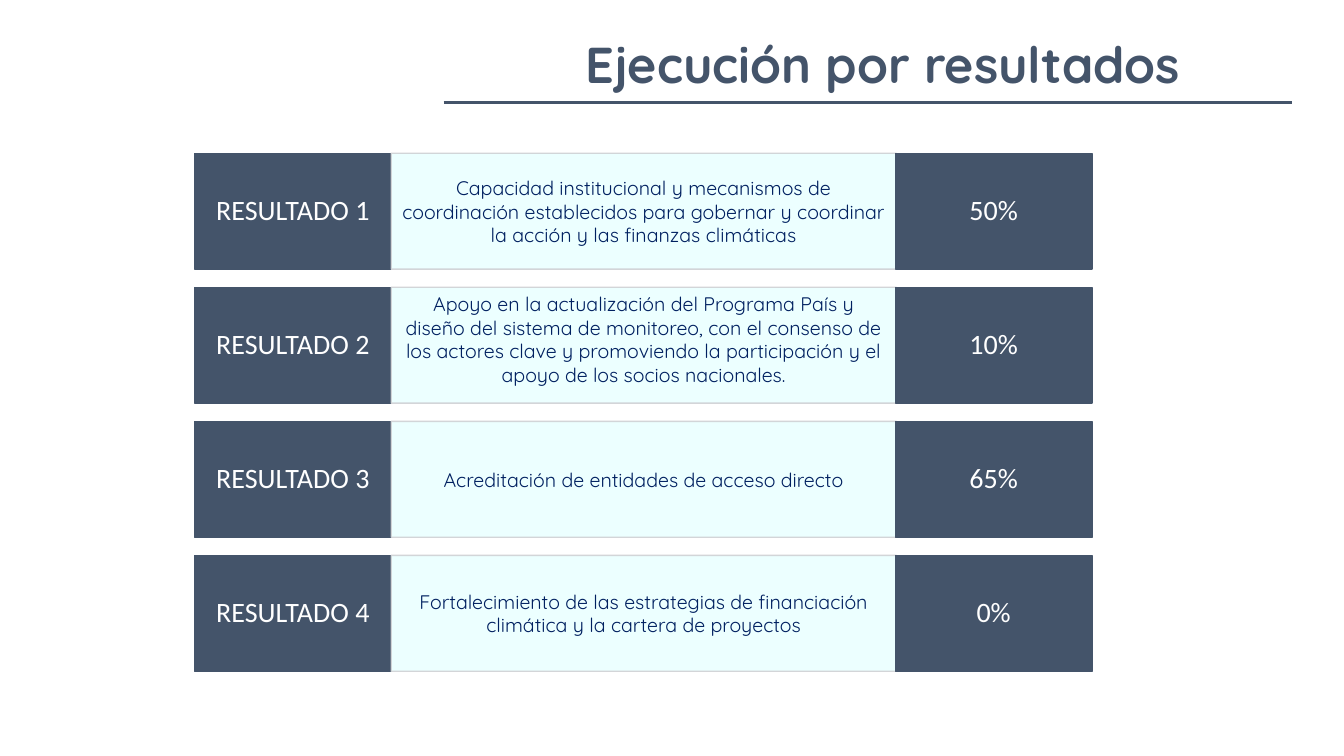
"""Builds the slide that shows progress for each result."""
from dataclasses import dataclass

from lxml.etree import SubElement
from pptx import Presentation
from pptx.dml.color import RGBColor
from pptx.enum.shapes import MSO_CONNECTOR as Connector, MSO_SHAPE as Shape
from pptx.enum.text import MSO_ANCHOR as Anchor, PP_ALIGN as Align
from pptx.oxml.ns import qn
from pptx.util import Inches, Pt


@dataclass(frozen=True)
class Theme:
    slate: RGBColor = RGBColor(0x44, 0x54, 0x6A)
    ice: RGBColor = RGBColor(0xEB, 0xFF, 0xFF)
    border: RGBColor = RGBColor(0xCF, 0xD1, 0xD4)
    navy: RGBColor = RGBColor(0x00, 0x20, 0x60)
    white: RGBColor = RGBColor(0xFF, 0xFF, 0xFF)
    heading_font: str = "Quicksand"
    label_font: str = "Calibri"
    title_size: int = 36
    label_size: int = 20
    body_size: int = 14


THEME = Theme()
ROW_TOP, ROW_PITCH, ROW_HEIGHT = 1.52, 1.33, 1.15
LABEL_LEFT, DESCRIPTION_LEFT, PERCENT_LEFT = 1.93, 3.88, 8.88
LABEL_WIDTH, DESCRIPTION_WIDTH = 1.95, 5.01
RESULTS = [
    ("RESULTADO 1", "Capacidad institucional y mecanismos de coordinación establecidos "
     "para gobernar y coordinar la acción y las finanzas climáticas", "50%", Anchor.MIDDLE),
    ("RESULTADO 2", "Apoyo en la actualización del Programa País y diseño del sistema de "
     "monitoreo, con el consenso de los actores clave y promoviendo la participación y el "
     "apoyo de los socios nacionales.", "10%", Anchor.TOP),
    ("RESULTADO 3", "Acreditación de entidades de acceso directo", "65%", Anchor.MIDDLE),
    ("RESULTADO 4", "Fortalecimiento de las estrategias de financiación climática y la "
     "cartera de proyectos", "0%", Anchor.MIDDLE),
]


def write_text(shape, text, *, font, size, color, bold=False, anchor=Anchor.MIDDLE,
               line_spacing=1.0, margins=(0.1, 0.05)):
    frame = shape.text_frame
    frame.word_wrap = True
    frame.vertical_anchor = anchor
    frame.margin_left = frame.margin_right = Inches(margins[0])
    frame.margin_top = frame.margin_bottom = Inches(margins[1])
    paragraph = frame.paragraphs[0]
    paragraph.text = text
    paragraph.alignment = Align.CENTER
    paragraph.line_spacing = line_spacing
    paragraph.font.name = font
    paragraph.font.size = Pt(size)
    paragraph.font.bold = bold
    paragraph.font.color.rgb = color


def add_box(slide, left, top, width, fill, line):
    shape = slide.shapes.add_shape(Shape.RECTANGLE, Inches(left), Inches(top),
                                   Inches(width), Inches(ROW_HEIGHT))
    shape.shadow.inherit = False
    shape.fill.solid()
    shape.fill.fore_color.rgb = fill
    shape.line.color.rgb = line
    shape.line.width = Pt(1)
    return shape


def add_label(slide, left, top, text):
    box = add_box(slide, left, top, LABEL_WIDTH, THEME.slate, THEME.slate)
    write_text(box, text, font=THEME.label_font, size=THEME.label_size,
               color=THEME.white, line_spacing=0.9, margins=(0.19, 0.11))


def add_description(slide, top, text, anchor):
    box = add_box(slide, DESCRIPTION_LEFT, top, DESCRIPTION_WIDTH, THEME.ice, THEME.border)
    for color in box.fill._xPr.iter(qn("a:srgbClr")):
        SubElement(color, qn("a:alpha"), val="90000")
    write_text(box, text, font=THEME.heading_font, size=THEME.body_size,
               color=THEME.navy, anchor=anchor)


def add_title(slide, text):
    box = slide.shapes.add_textbox(Inches(4.17), Inches(0.31), Inches(9.17), Inches(0.72))
    write_text(box, text, font=THEME.heading_font, size=THEME.title_size,
               color=THEME.slate, bold=True, line_spacing=0.9)


def add_rule(slide, left, right, top):
    rule = slide.shapes.add_connector(Connector.STRAIGHT, Inches(left), Inches(top),
                                      Inches(right), Inches(top))
    rule.line.color.rgb = THEME.slate
    rule.line.width = Pt(2.25)
    SubElement(rule._element.spPr, qn("a:effectLst"))


def main():
    presentation = Presentation()
    presentation.slide_width = Inches(13.33)
    presentation.slide_height = Inches(7.5)
    slide = presentation.slides.add_slide(presentation.slide_layouts[6])
    add_title(slide, "Ejecución por resultados")
    for index, (label, description, percent, anchor) in enumerate(RESULTS):
        top = ROW_TOP + index * ROW_PITCH
        add_label(slide, LABEL_LEFT, top, label)
        add_description(slide, top, description, anchor)
        add_label(slide, PERCENT_LEFT, top, percent)
    add_rule(slide, 4.4, 12.81, 1.02)
    presentation.save("out.pptx")


if __name__ == "__main__":
    main()
